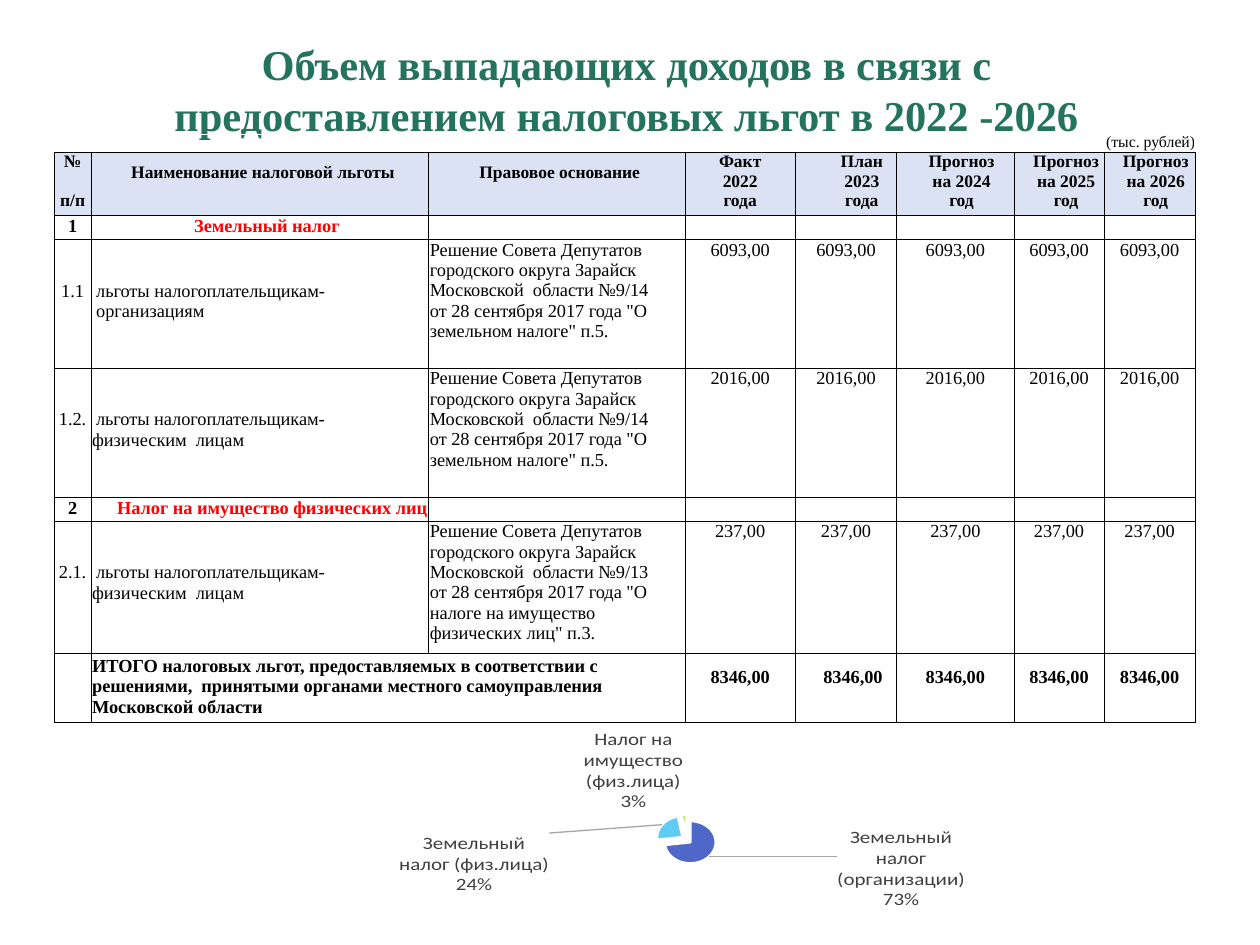
from copy import deepcopy

from lxml.etree import SubElement
from pptx import Presentation
from pptx.chart.data import CategoryChartData
from pptx.dml.color import RGBColor
from pptx.enum.chart import XL_CHART_TYPE, XL_LABEL_POSITION
from pptx.enum.text import MSO_ANCHOR, PP_ALIGN
from pptx.oxml import parse_xml
from pptx.oxml.ns import qn
from pptx.util import Pt

COLORS = {"title": "23735D", "text": "000000", "tax": "FF0000", "header": "DAE2F3",
          "label": "404040", "leader": "A6A6A6", "edge": "FFFFFF"}
SLICES = ["4E67C8", "5ECCF3", "A7EA52"]
SERIF = "Times New Roman"

TITLE = ["Объем выпадающих доходов в связи с",
         "предоставлением налоговых льгот в 2022 -2026"]
UNIT = "(тыс. рублей)"
HEADER = [("№", "п/п"), ("Наименование налоговой льготы",), ("Правовое основание",),
          ("Факт", "2022", "года"), ("План", "2023", "года"), ("Прогноз", "на 2024", "год"),
          ("Прогноз", "на 2025", "год"), ("Прогноз", "на 2026", "год")]
HEADER_LEFT = [0, 23, 29, 0, 18, 7, 8, 7]
LAW = ("Решение Совета Депутатов городского округа Зарайск Московской  области "
       "№9/{} от 28 сентября 2017 года \"О {}")
LAND = LAW.format(14, "земельном налоге\" п.5.")
PROPERTY = LAW.format(13, "налоге на имущество физических лиц\" п.3.")
PERSONS = "льготы налогоплательщикам-физическим  лицам"
TAXES = {2: ("1", "Земельный налог", 59), 5: ("2", "Налог на имущество физических лиц", 15)}
BENEFITS = {
    3: ("1.1", "льготы налогоплательщикам-организациям", 3, 0, LAND, "6093,00"),
    4: ("1.2.", PERSONS, 0.7, 2.2, LAND, "2016,00"),
    6: ("2.1.", PERSONS, 0.7, 2.2, PROPERTY, "237,00"),
}
TOTAL = ("ИТОГО налоговых льгот, предоставляемых в соответствии с решениями,  принятыми "
         "органами местного самоуправления Московской области")
TOTAL_VALUE = "8346,00"
COL_WIDTHS = [21, 193, 146.5, 63, 58, 67, 51.5, 52]
ROW_HEIGHTS = [10, 33, 14, 73.5, 73.5, 14, 73.5, 36.5]
YEAR_COLS = range(3, 8)

SHARES = [("Земельный налог (организации)", 73), ("Земельный налог (физ.лица)", 24),
          ("Налог на имущество (физ.лица)", 3)]
LABEL_SHIFTS = [(0.16, -0.16), (-0.14, 0.41)]
PIE_BOX = {"x": 0.45, "y": 0.47, "w": 0.08, "h": 0.28}
C_NS = ('xmlns:c="http://schemas.openxmlformats.org/drawingml/2006/chart" '
        'xmlns:a="http://schemas.openxmlformats.org/drawingml/2006/main"')


def rgb(name):
    return RGBColor.from_string(COLORS[name])


def style(p, size, color="text", bold=False):
    for r in p.runs:
        r.font.name, r.font.size, r.font.bold = SERIF, Pt(size), bold
        r.font.color.rgb = rgb(color)


def fill_cell(cell, lines, size=10.5, color="text", bold=False, align=PP_ALIGN.LEFT,
              left=0, top=0, right=0):
    cell.margin_left, cell.margin_top = Pt(left), Pt(top)
    cell.margin_right = Pt(right)
    tf = cell.text_frame
    tf.text = "\n".join(lines)
    for p in tf.paragraphs:
        p.alignment = align
        style(p, size, color, bold)


def add_title(s):
    tf = s.shapes.add_textbox(Pt(9), Pt(21), Pt(698), Pt(60)).text_frame
    tf.word_wrap, tf.vertical_anchor = True, MSO_ANCHOR.MIDDLE
    tf.text = "\n".join(TITLE)
    for p in tf.paragraphs:
        p.alignment, p.line_spacing = PP_ALIGN.CENTER, Pt(29)
        style(p, 24.3, "title", True)


def prepare_cell(cell, row):
    cell.margin_left = cell.margin_right = cell.margin_top = cell.margin_bottom = 0
    SubElement(cell.text_frame.paragraphs[0]._p, qn("a:endParaRPr"), sz="1050")
    tcPr = cell._tc.get_or_add_tcPr()
    for side in ("lnB",) if row == 0 else ("lnL", "lnR", "lnT", "lnB"):
        ln = SubElement(tcPr, qn("a:" + side), w=str(Pt(0.5)))
        SubElement(SubElement(ln, qn("a:solidFill")), qn("a:srgbClr"), val=COLORS["text"])
    if row == 1:
        cell.fill.solid()
        cell.fill.fore_color.rgb = rgb("header")
    else:
        cell.fill.background()


def add_benefits(s):
    table = s.shapes.add_table(len(ROW_HEIGHTS), len(COL_WIDTHS), Pt(31), Pt(77),
                               Pt(sum(COL_WIDTHS)), Pt(sum(ROW_HEIGHTS))).table
    table.first_row = table.horz_banding = False
    for col, width in zip(table.columns, COL_WIDTHS):
        col.width = Pt(width)
    for i, height in enumerate(ROW_HEIGHTS):
        table.rows[i].height = Pt(height)
        for cell in table.rows[i].cells:
            prepare_cell(cell, i)
    center = PP_ALIGN.CENTER

    table.cell(0, 0).merge(table.cell(0, 7))
    fill_cell(table.cell(0, 0), [UNIT], 9, align=PP_ALIGN.RIGHT)
    table.cell(0, 0).text_frame.paragraphs[0].line_spacing = Pt(9.1)
    for j, (lines, left) in enumerate(zip(HEADER, HEADER_LEFT)):
        named = j in (1, 2)
        fill_cell(table.cell(1, j), lines, 10, bold=True, left=left, top=6 if named else 0,
                  align=PP_ALIGN.LEFT if named else center)
    table.cell(1, 0).text_frame.paragraphs[1].space_before = Pt(11)

    for i, (number, tax, left) in TAXES.items():
        fill_cell(table.cell(i, 0), [number], bold=True, align=center, top=0.5)
        fill_cell(table.cell(i, 1), [tax], color="tax", bold=True, left=left, top=0.5)
    for i, (number, name, left, indent, law, value) in BENEFITS.items():
        fill_cell(table.cell(i, 0), [number], align=center, top=23.5)
        fill_cell(table.cell(i, 1), [name], left=left, top=23.5, right=40)
        pPr = table.cell(i, 1).text_frame.paragraphs[0]._p.get_or_add_pPr()
        pPr.set("indent", str(Pt(indent)))
        fill_cell(table.cell(i, 2), [law], left=0.7, right=15)
        for j in YEAR_COLS:
            fill_cell(table.cell(i, j), [value], align=center)

    table.cell(7, 1).merge(table.cell(7, 2))
    fill_cell(table.cell(7, 1), [TOTAL], bold=True, left=0.7, top=1.5, right=30)
    for j in YEAR_COLS:
        plan = j == 4
        fill_cell(table.cell(7, j), [TOTAL_VALUE], bold=True, top=8, left=16 if plan else 0,
                  align=PP_ALIGN.LEFT if plan else center)


def manual_layout(inner, **values):
    marks = "".join(f'<c:{k} val="{v}"/>' for k, v in values.items())
    return f"<c:layout {C_NS}><c:manualLayout>{inner}{marks}</c:manualLayout></c:layout>"


def add_pie(s):
    data = CategoryChartData()
    data.categories = [name for name, _ in SHARES]
    data.add_series("Series 1", [share for _, share in SHARES])
    chart = s.shapes.add_chart(XL_CHART_TYPE.PIE, Pt(178.5), Pt(414.5), Pt(436.5), Pt(124.5),
                               data).chart
    chart.has_title = chart.has_legend = False
    chart.font.name, chart.font.size = "Calibri", Pt(10)
    plot = chart.plots[0]
    plot.vary_by_categories = True
    series = plot.series[0]
    for i, color in enumerate(SLICES):
        fmt = series.points[i].format
        fmt.fill.solid()
        fmt.fill.fore_color.rgb = RGBColor.from_string(color)
        fmt.line.color.rgb, fmt.line.width = rgb("edge"), Pt(1.5)
    series._element.find(qn("c:tx")).addnext(parse_xml(f'<c:explosion {C_NS} val="19"/>'))

    labels = series.data_labels
    labels.show_percentage = labels.show_category_name = True
    labels.show_value = False
    labels.position = XL_LABEL_POSITION.OUTSIDE_END
    labels.font.name, labels.font.size = "Calibri", Pt(12)
    labels.font.color.rgb = rgb("label")
    dLbls = labels._element
    for old in dLbls.findall(qn("c:showLeaderLines")):
        dLbls.remove(old)
    dLbls.find(qn("c:showBubbleSize")).addnext(
        parse_xml(f"<c:separator {C_NS}>\n</c:separator>"))
    shared = [deepcopy(e) for e in dLbls]
    for i, (x, y) in enumerate(LABEL_SHIFTS):
        dLbl = parse_xml(f'<c:dLbl {C_NS}><c:idx val="{i}"/></c:dLbl>')
        dLbl.append(parse_xml(manual_layout("", x=x, y=y)))
        dLbl.extend([deepcopy(e) for e in shared])
        dLbls.insert(i, dLbl)
    dLbls.append(parse_xml(f'<c:showLeaderLines {C_NS} val="1"/>'))
    dLbls.append(parse_xml(
        f'<c:leaderLines {C_NS}><c:spPr><a:ln w="9525"><a:solidFill>'
        f'<a:srgbClr val="{COLORS["leader"]}"/></a:solidFill></a:ln></c:spPr></c:leaderLines>'))

    area = plot._element.getparent()
    for old in area.findall(qn("c:layout")):
        area.remove(old)
    inner = '<c:layoutTarget val="inner"/><c:xMode val="edge"/><c:yMode val="edge"/>'
    area.insert(0, parse_xml(manual_layout(inner, **PIE_BOX)))


def main():
    """Build the slide on tax benefits and lost revenue."""
    prs = Presentation()
    prs.slide_width, prs.slide_height = Pt(720), Pt(540)
    s = prs.slides.add_slide(prs.slide_layouts[6])
    add_title(s)
    add_benefits(s)
    add_pie(s)
    prs.save("out.pptx")


if __name__ == "__main__":
    main()
